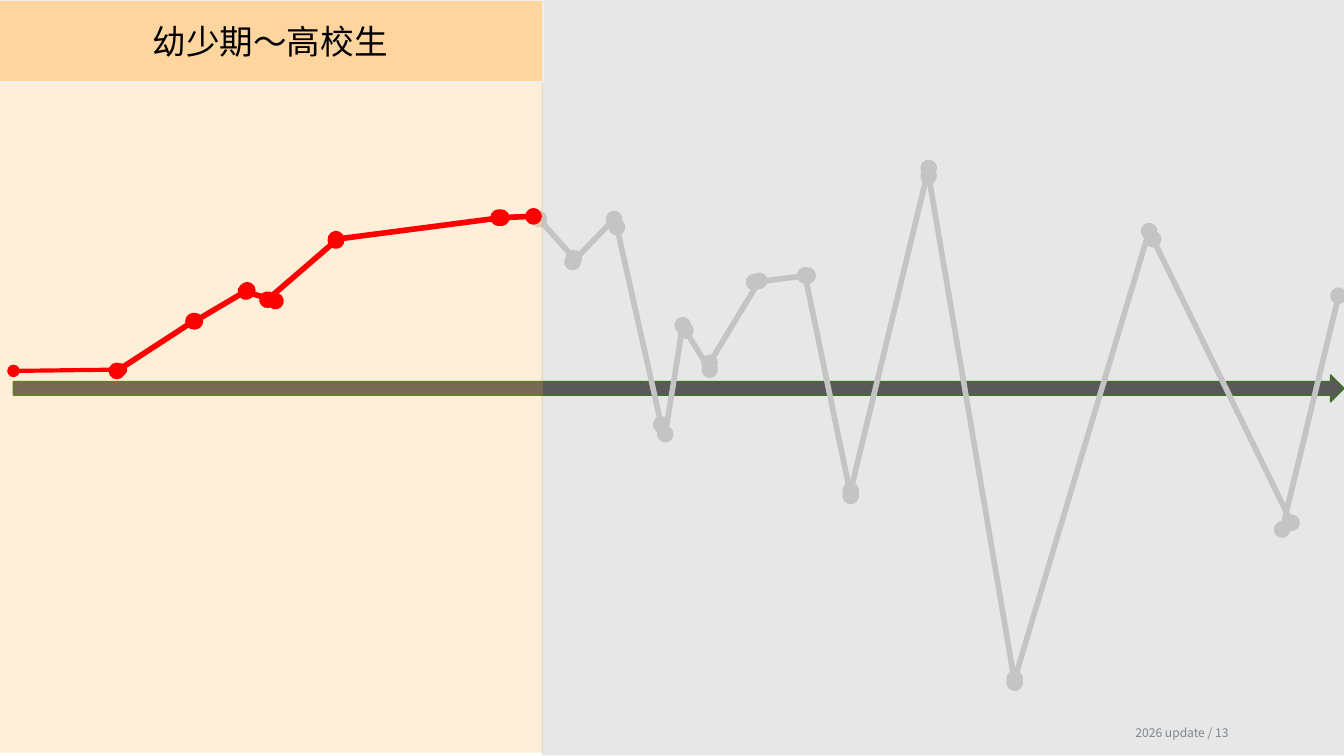
from pptx import Presentation
from pptx.dml.color import RGBColor
from pptx.enum.shapes import MSO_CONNECTOR, MSO_SHAPE
from pptx.enum.text import MSO_ANCHOR, MSO_AUTO_SIZE, PP_ALIGN
from pptx.oxml.ns import qn
from pptx.util import Inches, Pt
from lxml.etree import SubElement

ORANGE = RGBColor(0xFF, 0xAB, 0x40)
DARK = RGBColor(0x59, 0x59, 0x59)
GREEN = RGBColor(0x38, 0x76, 0x1D)
GRAY = RGBColor(0xD6, 0xD6, 0xD6)
RED = RGBColor(0xFF, 0x00, 0x00)
PALE = RGBColor(0xEF, 0xEF, 0xEF)
BLACK = RGBColor(0x00, 0x00, 0x00)
SLATE = RGBColor(0x7D, 0x87, 0x91)
FONT = "Noto Sans CJK JP"

HEADING = "幼少期〜高校生"
FOOTER = "2026 update / 13"

LATER_YEARS = [
    (5.65, 2.09, 5.28, 2.70),
    (6.01, 2.05, 5.61, 2.10),
    (7.55, 5.08, 6.91, 1.31),
    (8.55, 1.72, 7.55, 5.05),
    (9.61, 3.89, 8.58, 1.78),
    (9.96, 2.20, 9.54, 3.94),
    (5.08, 2.42, 4.95, 3.23),
    (5.28, 2.75, 5.10, 2.46),
    (6.33, 3.69, 5.99, 2.05),
    (6.91, 1.25, 6.33, 3.65),
    (4.27, 1.92, 4.01, 1.63),
    (4.57, 1.63, 4.26, 1.95),
    (4.92, 3.16, 4.59, 1.69),
]
FIRST_STEP = [(0.10, 2.76, 0.90, 2.75)]
SCHOOL_YEARS = [
    (3.73, 1.62, 2.50, 1.78),
    (1.84, 2.16, 1.45, 2.39),
    (0.87, 2.76, 1.44, 2.39),
    (2.05, 2.24, 1.83, 2.17),
    (2.50, 1.79, 1.99, 2.23),
    (3.97, 1.61, 3.71, 1.62),
]
PERIODS = [
    ((0, -0.02, 4.04, 5.62), ORANGE, 20),
    ((4.03, 0, 5.97, 5.62), DARK, 14),
]


def paint(sp, color, opacity=100):
    sp.fill.solid()
    sp.fill.fore_color.rgb = color
    if opacity < 100:
        clr = sp._element.spPr.find(qn("a:solidFill"))[0]
        SubElement(clr, qn("a:alpha"), val=str(opacity * 1000))


def outline(sp, color, width):
    sp.line.color.rgb = color
    sp.line.width = Pt(width)


def add_block(s, kind, box):
    sp = s.shapes.add_shape(kind, *map(Inches, box))
    sp.shadow.inherit = False
    return sp


def add_segments(s, segments, color, width):
    for ends in segments:
        line = s.shapes.add_connector(MSO_CONNECTOR.STRAIGHT, *map(Inches, ends))
        outline(line, color, width)
        ln = line._element.spPr.find(qn("a:ln"))
        for tag in ("a:headEnd", "a:tailEnd"):
            SubElement(ln, qn(tag), type="oval", w="med", len="med")
        SubElement(line._element.spPr, qn("a:effectLst"))


def write(sp, text, size, color, frame):
    tf = sp.text_frame
    for name, value in frame.items():
        setattr(tf, name, value)
    p = tf.paragraphs[0]
    r = p.add_run()
    r.text = text
    for name, value in {"size": Pt(size), "name": FONT}.items():
        setattr(r.font, name, value)
    r.font.color.rgb = color
    SubElement(r._r.get_or_add_rPr(), qn("a:ea"), typeface=FONT)
    return p


def main():
    prs = Presentation()
    prs.slide_width = Inches(10)
    prs.slide_height = prs.slide_width * 9 // 16
    s = prs.slides.add_slide(prs.slide_layouts[5])

    timeline = add_block(s, MSO_SHAPE.RIGHT_ARROW, (0.1, 2.79, 9.9, 0.2))
    paint(timeline, DARK)
    outline(timeline, GREEN, 0.75)
    add_segments(s, LATER_YEARS, GRAY, 3)

    for box, color, opacity in PERIODS:
        sp = add_block(s, MSO_SHAPE.RECTANGLE, box)
        paint(sp, color, opacity)
        sp.line.fill.background()

    title = s.shapes.title
    s.shapes._spTree.append(title._element)
    place = {"left": -0.02, "top": 0, "width": 4.06, "height": 0.61}
    for name, value in place.items():
        setattr(title, name, Inches(value))
    paint(title, ORANGE, 37)
    outline(title, PALE, 0.75)
    margins = ("margin_left", "margin_top", "margin_right", "margin_bottom")
    frame = {
        **dict.fromkeys(margins, Inches(0.1)),
        "vertical_anchor": MSO_ANCHOR.MIDDLE,
        "auto_size": MSO_AUTO_SIZE.NONE,
        "word_wrap": True,
    }
    p = write(title, HEADING, 18, BLACK, frame)
    p.alignment = PP_ALIGN.CENTER

    add_segments(s, FIRST_STEP, RED, 2.25)
    add_segments(s, SCHOOL_YEARS, RED, 3)

    footer = s.shapes.add_textbox(*map(Inches, (8.35, 5.36, 1.35, 0.16)))
    frame = {
        "margin_top": Inches(0.04),
        "margin_bottom": Inches(0),
        "word_wrap": True,
    }
    write(footer, FOOTER, 6.5, SLATE, frame)

    prs.save("out.pptx")


if __name__ == "__main__":
    main()
